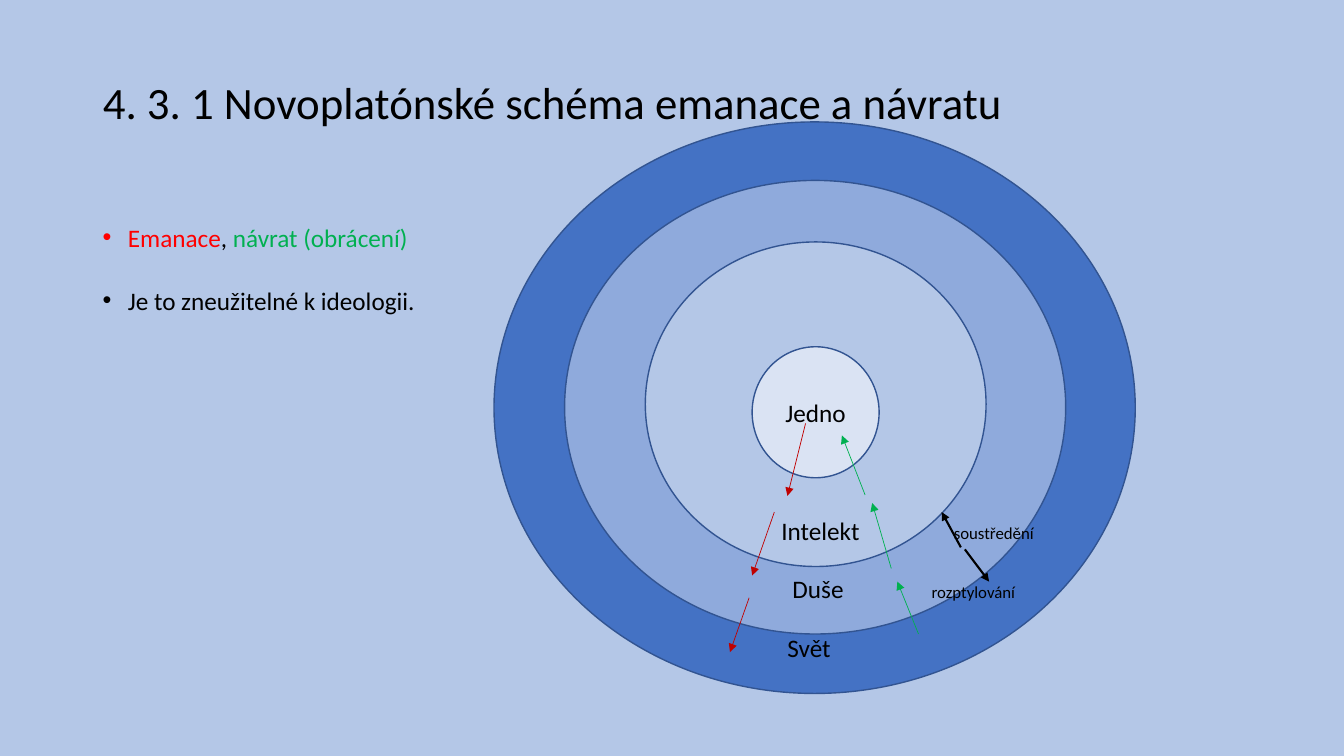
"""Build the slide on the Neoplatonic scheme of emanation and return."""
from lxml import etree
from pptx import Presentation
from pptx import util as u
from pptx.dml.color import RGBColor
from pptx.enum import shapes, text
from pptx.oxml.ns import qn

CELL = u.Inches(1)
COLS, ROWS = 13.33, 7.5
MARGIN, CONTENT_W = 0.92, 11.5
LABEL_TOP, LABEL_STEP, LABEL_H = 5.11, 0.58, 0.3
FONT = "Calibri"

BLACK = RGBColor(0x00, 0x00, 0x00)
RED = RGBColor(0xFF, 0x00, 0x00)
DARK_RED = RGBColor(0xC0, 0x00, 0x00)
GREEN = RGBColor(0x00, 0xB0, 0x50)
OUTLINE = RGBColor(0x32, 0x54, 0x91)
WORLD = RGBColor(0x44, 0x72, 0xC4)
SOUL = RGBColor(0x8F, 0xAA, 0xDC)
PALE = RGBColor(0xB4, 0xC7, 0xE7)
ONE = RGBColor(0xDA, 0xE3, 0xF3)

RINGS = [
    ((4.9, 1.21, 6.36, 5.67), WORLD),
    ((5.6, 1.79, 4.97, 4.5), SOUL),
    ((6.4, 2.4, 3.38, 3.22), PALE),
]
BULLETS = [
    [("Emanace", RED), (", ", BLACK), ("návrat (obrácení)", GREEN)],
    [("Je to zneužitelné k ideologii.", BLACK)],
]
LABELS = [
    ("Intelekt", 7.75, 0, 18),
    ("Duše", 7.86, 1, 18),
    ("Svět", 7.81, 2, 18),
    ("soustředění", 9.46, 0.05, 12),
    ("rozptylování", 9.24, 1.05, 12),
]
ARROWS = [
    (DARK_RED, 0.5, [(7.99, 4.2, 7.81, 4.92), (7.68, 5.08, 7.46, 5.71),
                     (7.43, 5.93, 7.24, 6.47)]),
    (GREEN, 0.5, [(8.58, 4.91, 8.35, 4.32), (8.84, 5.64, 8.65, 4.99),
                  (9.11, 6.29, 8.9, 5.77)]),
    (BLACK, 1.5, [(9.53, 5.43, 9.34, 5.08), (9.57, 5.45, 9.81, 5.77)]),
]


def grid(*cells):
    """Turn grid cells into slide lengths."""
    return [int(c * CELL) for c in cells]


def add_run(p, words, size, color=BLACK):
    """Add one formatted run to a paragraph."""
    r = p.add_run()
    r.text = words
    r.font.size, r.font.name = u.Pt(size), FONT
    r.font.color.rgb = color


def clear_insets(tf):
    """Remove the margins of a text frame."""
    tf.margin_left = tf.margin_right = tf.margin_top = tf.margin_bottom = 0


def add_ring(s, box, color):
    """Add an outlined ellipse."""
    sp = s.shapes.add_shape(shapes.MSO_SHAPE.OVAL, *grid(*box))
    sp.shadow.inherit = False
    sp.fill.solid()
    sp.fill.fore_color.rgb = color
    sp.line.color.rgb, sp.line.width = OUTLINE, u.Pt(1)
    return sp


def add_core(s):
    """Add the labelled centre of the scheme."""
    tf = add_ring(s, (7.46, 3.44, 1.26, 1.3), ONE).text_frame
    clear_insets(tf)
    tf.vertical_anchor = text.MSO_ANCHOR.MIDDLE
    tf.paragraphs[0].alignment = text.PP_ALIGN.CENTER
    add_run(tf.paragraphs[0], "Jedno", 18)


def add_title(s, words):
    """Format the title placeholder and bring it in front of the rings."""
    sp = s.shapes.title
    sp.left, sp.top, sp.width, sp.height = grid(MARGIN, 0.4, CONTENT_W, 1.28)
    s.shapes._spTree.append(sp._element)
    tf = sp.text_frame
    tf.vertical_anchor = text.MSO_ANCHOR.MIDDLE
    p = tf.paragraphs[0]
    p.alignment, p.line_spacing = text.PP_ALIGN.LEFT, 0.9
    add_run(p, words, 32)


def add_bullets(s, items):
    """Add the bulleted list."""
    tf = s.shapes.add_textbox(*grid(MARGIN, 2.11, 3.9, 1.2)).text_frame
    tf.word_wrap = True
    for i, runs in enumerate(items):
        p = tf.add_paragraph() if i else tf.paragraphs[0]
        p.line_spacing = 1.15
        p.space_before, p.space_after = u.Pt(10 if i else 0), u.Pt(10)
        ppr = p._p.get_or_add_pPr()
        indent = u.Inches(0.25)
        ppr.set("marL", str(indent))
        ppr.set("indent", str(-indent))
        etree.SubElement(ppr, qn("a:buFont"), typeface="Arial")
        etree.SubElement(ppr, qn("a:buChar"), char="•")
        for words, color in runs:
            add_run(p, words, 18, color)


def add_label(s, words, left, row, size):
    """Add a label on a row of the scheme."""
    top = LABEL_TOP + row * LABEL_STEP
    tf = s.shapes.add_textbox(*grid(left, top, 1, LABEL_H)).text_frame
    clear_insets(tf)
    tf.word_wrap = True
    tf.vertical_anchor = text.MSO_ANCHOR.MIDDLE
    add_run(tf.paragraphs[0], words, size)


def add_arrow(s, ends, color, width):
    """Add a straight arrow."""
    sp = s.shapes.add_connector(shapes.MSO_CONNECTOR.STRAIGHT, *grid(*ends))
    sp.line.color.rgb, sp.line.width = color, u.Pt(width)
    etree.SubElement(sp.line._get_or_add_ln(), qn("a:tailEnd"), type="triangle")
    etree.SubElement(sp._element.spPr, qn("a:effectLst"))


def main():
    """Build and save the slide."""
    prs = Presentation()
    prs.slide_width, prs.slide_height = grid(COLS, ROWS)
    s = prs.slides.add_slide(prs.slide_layouts[5])
    s.background.fill.solid()
    s.background.fill.fore_color.rgb = PALE
    for box, color in RINGS:
        add_ring(s, box, color)
    add_title(s, "4. 3. 1 Novoplatónské schéma emanace a návratu")
    add_bullets(s, BULLETS)
    for label in LABELS:
        add_label(s, *label)
    add_core(s)
    for color, width, arrows in ARROWS:
        for ends in arrows:
            add_arrow(s, ends, color, width)
    prs.save("out.pptx")


if __name__ == "__main__":
    main()
